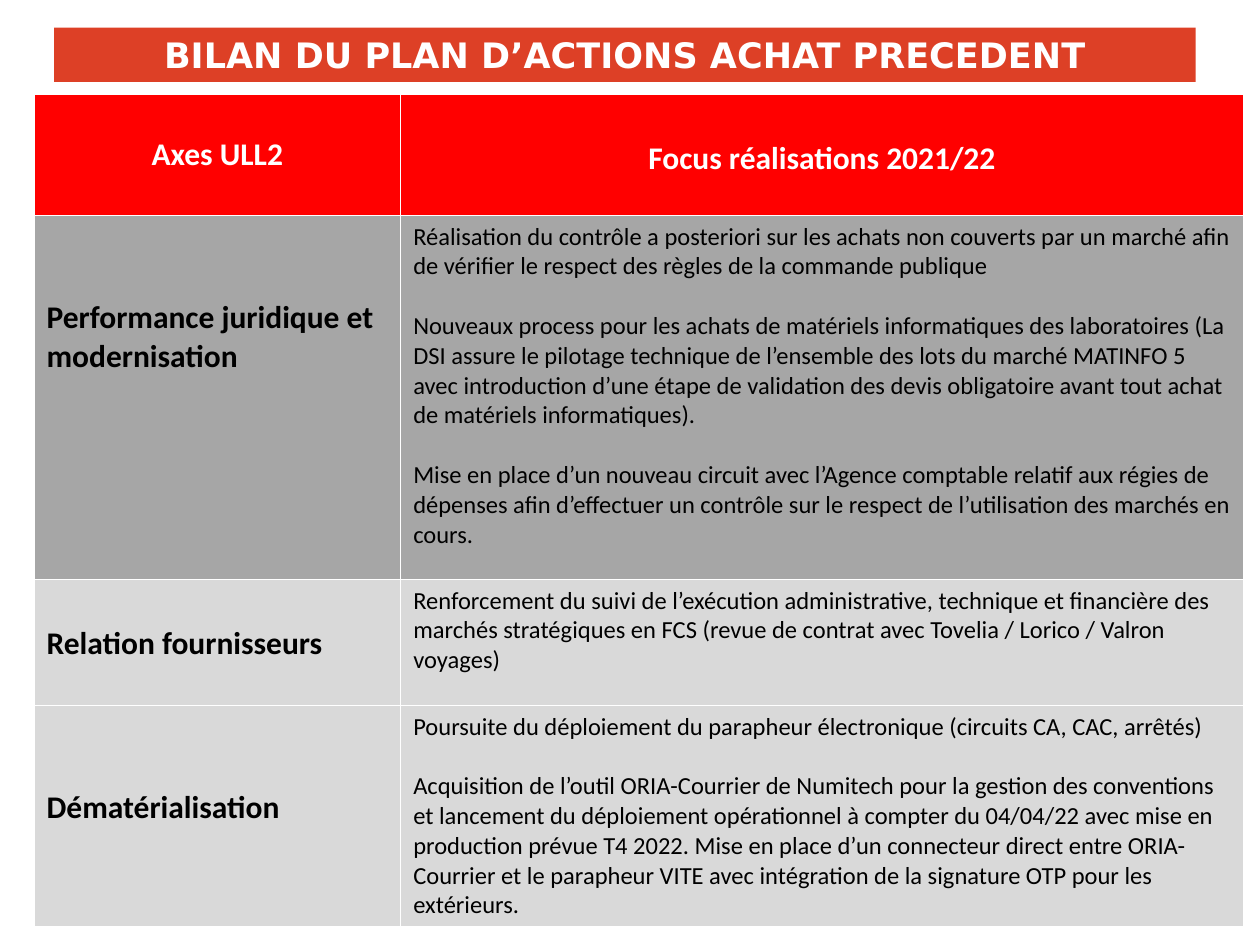
from dataclasses import dataclass

from pptx import Presentation
from pptx.dml.color import RGBColor as RGB
from pptx.enum.text import MSO_ANCHOR as Anchor, MSO_AUTO_SIZE as Auto, PP_ALIGN as Align
from pptx.util import Inches, Pt


@dataclass(frozen=True)
class Theme:
    banner: str = "DD4026"
    head: str = "FF0000"
    dark: str = "A6A6A6"
    light: str = "D9D9D9"
    white: str = "FFFFFF"
    black: str = "000000"
    title_font: str = "DejaVu Sans"
    font: str = "Calibri"
    title: int = 20
    label: int = 18
    body: int = 14
    gap: int = 17     # space between body paragraphs, points


T = Theme()
PAD = 0.05            # cell padding above the text, inches
LINE = 0.305          # height of one label line, inches
COLS = (2.91, 6.69)

# Each row: height, fill, label, lines above the label, body paragraphs
HEADS = ("Axes ULL2", 0.9), ("Focus réalisations 2021/22", 1)
ROWS = (
    (2.89, T.dark, "Performance juridique et modernisation", 2, (
        "Réalisation du contrôle a posteriori sur les achats non couverts par un marché "
        "afin de vérifier le respect des règles de la commande publique",
        "Nouveaux process pour les achats de matériels informatiques des laboratoires (La "
        "DSI assure le pilotage technique de l’ensemble des lots du marché MATINFO 5 "
        "avec introduction d’une étape de validation des devis obligatoire avant tout achat "
        "de matériels informatiques).",
        "Mise en place d’un nouveau circuit avec l’Agence comptable relatif aux régies de "
        "dépenses afin d’effectuer un contrôle sur le respect de l’utilisation des marchés "
        "en cours.",
    )),
    (1, T.light, "Relation fournisseurs", 1, (
        "Renforcement du suivi de l’exécution administrative, technique et financière des "
        "marchés stratégiques en FCS (revue de contrat avec Tovelia / Lorico / Valron "
        "voyages)",
    )),
    (1.73, T.light, "Dématérialisation", 2, (
        "Poursuite du déploiement du parapheur électronique (circuits CA, CAC, arrêtés)",
        "Acquisition de l’outil ORIA-Courrier de Numitech pour la gestion des conventions et "
        "lancement du déploiement opérationnel à compter du 04/04/22 avec mise en "
        "production prévue T4 2022. Mise en place d’un connecteur direct entre ORIA-"
        "Courrier et le parapheur VITE avec intégration de la signature OTP pour les "
        "extérieurs.",
    )),
)


def style(para, font, size, color, bold=False, align=Align.LEFT):
    para.alignment = align
    face = para.font
    face.name, face.size, face.bold = font, Pt(size), bold
    face.color.rgb = RGB.from_string(color)


def paint(item, color):
    item.fill.solid()
    item.fill.fore_color.rgb = RGB.from_string(color)


def add_title(slide, text):
    box = slide.shapes.title
    box.left, box.top, box.width, box.height = map(Inches, (0.43, 0.22, 9.06, 0.43))
    paint(box, T.banner)
    frame = box.text_frame
    frame.text = text
    frame.word_wrap, frame.auto_size = True, Auto.NONE
    frame.vertical_anchor = Anchor.MIDDLE
    style(frame.paragraphs[0], T.title_font, T.title, T.white, True, Align.CENTER)


def fill_cell(cell, texts, fill, size, color, bold=False, align=Align.LEFT, drop=0):
    """Write paragraphs in a cell, starting `drop` label lines down."""
    paint(cell, fill)
    cell.vertical_anchor = Anchor.TOP
    cell.margin_top = Inches(PAD + drop * LINE)
    frame = cell.text_frame
    for i, text in enumerate(texts):
        para = frame.add_paragraph() if i else frame.paragraphs[0]
        para.text = text
        if i:
            para.space_before = Pt(T.gap)
        style(para, T.font, size, color, bold, align)


def add_grid(slide):
    highs = [0.96] + [row[0] for row in ROWS]
    grid = slide.shapes.add_table(
        len(highs), len(COLS), Inches(0.27), Inches(0.75),
        Inches(sum(COLS)), Inches(sum(highs))).table
    grid.horz_banding = False
    for col, wide in zip(grid.columns, COLS):
        col.width = Inches(wide)
    for row, high in zip(grid.rows, highs):
        row.height = Inches(high)

    # Heading row
    for c, (text, drop) in enumerate(HEADS):
        fill_cell(grid.cell(0, c), [text], T.head, T.label, T.white, True,
                  Align.CENTER, drop)

    # One row per axis
    for r, (_, fill, label, drop, texts) in enumerate(ROWS, 1):
        fill_cell(grid.cell(r, 0), [label], fill, T.label, T.black, True, drop=drop)
        fill_cell(grid.cell(r, 1), texts, fill, T.body, T.black)


def main():
    deck = Presentation()
    deck.slide_width, deck.slide_height = Inches(10), Inches(7.5)
    slide = deck.slides.add_slide(deck.slide_layouts.get_by_name("Title Only"))
    add_title(slide, "BILAN DU PLAN D’ACTIONS ACHAT PRECEDENT")
    add_grid(slide)
    deck.save("out.pptx")


if __name__ == "__main__":
    main()
